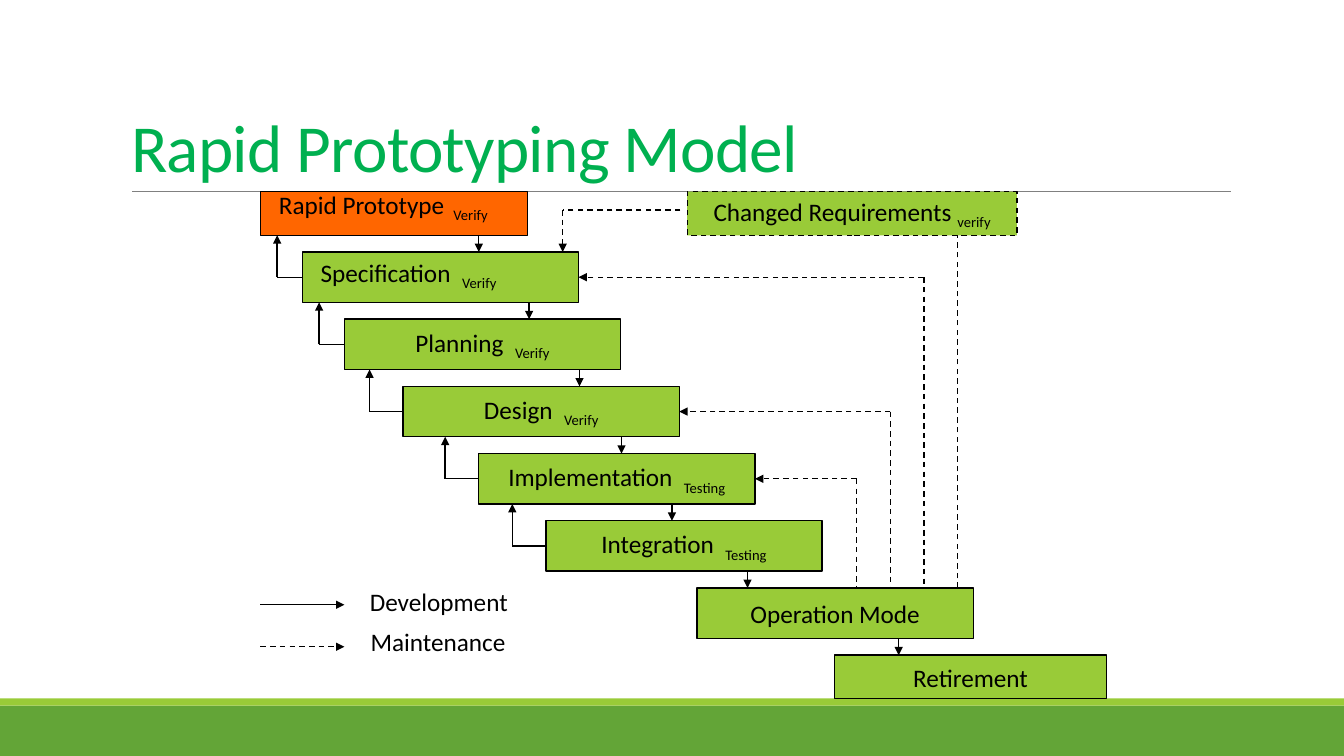
from dataclasses import dataclass

from lxml.etree import SubElement
from pptx import Presentation
from pptx.dml.color import RGBColor
from pptx.enum.dml import MSO_LINE_DASH_STYLE as Dash
from pptx.enum.shapes import MSO_CONNECTOR, MSO_SHAPE
from pptx.enum.text import MSO_ANCHOR, MSO_AUTO_SIZE, PP_ALIGN
from pptx.oxml.ns import qn
from pptx.util import Cm, Pt


@dataclass(frozen=True)
class Theme:
    font: str = "Calibri"
    title_size: int = 48
    body_size: int = 18
    title: str = "00B050"
    ink: str = "000000"
    rule: str = "808080"
    stage: str = "99CB38"
    prototype: str = "FF6600"
    footer: str = "63A537"


# Content: text is (label, subscript)
TITLE = "Rapid Prototyping Model"
PROTOTYPE = ("Rapid Prototype ", " Verify")
SPECIFICATION = ("Specification  ", "Verify")
CHANGED = ("Changed Requirements ", "verify")
RETIREMENT = ("Retirement", "")
# Stages by row, with the left edge in grid units
STAGES = [
    (("", ""), 36),  # Specification has its own left-aligned label
    (("Planning  ", "Verify"), 41),
    (("Design  ", "Verify"), 48),
    (("Implementation  ", "Testing"), 57),
    (("Integration  ", "Testing"), 65),
    (("Operation Mode", ""), 83),
]
# Arrow columns, in grid units
FORWARD_COLUMNS = [57, 63, 69, 74, 80, 89, 107]
BACK_COLUMNS = [33, 38, 44, 53, 61]
MAINTENANCE = [(3, 102), (2, 106), (0, 110)]  # stage row, column
# Legend: label, label left and top in cm, line row, dashed
LEGEND = [
    ("Development", 9.07, 14.66, 72, False),
    ("Maintenance", 9.09, 15.67, 77, True),
]

# Layout: twelve grid units to 2.54 cm
FIRST_TOP, ROW_STEP, STAGE_UNITS, GAP = 30, 8, 6, 2
STAGE_WIDTH = Cm(6.96)
HEADER_TOP, SMALL_HEIGHT, LABEL_HEIGHT = Cm(4.83), Cm(1.1), Cm(1.02)
theme = Theme()


def grid(units):
    return Cm(2.54 * units / 12)


def row_top(row):
    return FIRST_TOP + ROW_STEP * row


def color(value):
    return RGBColor.from_string(value)


def add_run(paragraph, text, size=theme.body_size, ink=theme.ink):
    run = paragraph.add_run()
    run.text = text
    run.font.name = theme.font
    run.font.size = Pt(size)
    run.font.color.rgb = color(ink)
    return run


def write_label(paragraph, label):
    name, subscript = label
    if name:
        add_run(paragraph, name)
    if subscript:
        run = add_run(paragraph, subscript)
        run.font._element.set("baseline", "-25000")


def add_box(slide, left, top, width, height, fill, label=("", ""),
            outlined=True, dashed=False):
    shape = slide.shapes.add_shape(MSO_SHAPE.RECTANGLE, left, top, width, height)
    shape.shadow.inherit = False
    shape.fill.solid()
    shape.fill.fore_color.rgb = color(fill)
    if outlined:
        shape.line.color.rgb = color(theme.ink)
        shape.line.width = Pt(1)
        if dashed:
            shape.line.dash_style = Dash.DASH
    else:
        shape.line.fill.background()
    frame = shape.text_frame
    frame.word_wrap = False
    frame.vertical_anchor = MSO_ANCHOR.MIDDLE
    paragraph = frame.paragraphs[0]
    paragraph.alignment = PP_ALIGN.CENTER
    write_label(paragraph, label)
    return shape


def add_label(slide, left, top, width, label, wrap=False):
    box = slide.shapes.add_textbox(left, top, width, LABEL_HEIGHT)
    frame = box.text_frame
    frame.word_wrap = wrap
    frame.auto_size = MSO_AUTO_SIZE.SHAPE_TO_FIT_TEXT
    write_label(frame.paragraphs[0], label)


def add_line(slide, start, end, ink=theme.ink, width=1, arrow=False, dashed=False):
    line = slide.shapes.add_connector(MSO_CONNECTOR.STRAIGHT, *start, *end)
    line.line.color.rgb = color(ink)
    line.line.width = Pt(width)
    if dashed:
        line.line.dash_style = Dash.DASH
    properties = line._element.spPr
    if arrow:
        SubElement(properties.find(qn("a:ln")), qn("a:tailEnd"), type="triangle")
    SubElement(properties, qn("a:effectLst"))
    return line


def add_grid_line(slide, start, end, **style):
    return add_line(slide, [grid(n) for n in start], [grid(n) for n in end], **style)


def add_frame(slide, slide_width):
    # Footer bands, rule and title
    add_box(slide, 0, Cm(17.78), slide_width, Cm(1.27), theme.footer, outlined=False)
    add_box(slide, 0, Cm(17.6), slide_width, Cm(0.18), theme.stage, outlined=False)
    add_line(slide, (Cm(3.33), HEADER_TOP), (Cm(31.01), HEADER_TOP), theme.rule, 0.5)
    title = slide.shapes.title
    title.left, title.top, title.width, title.height = Cm(3.05), Cm(0.79), Cm(27.94), Cm(4.04)
    frame = title.text_frame
    frame.word_wrap = True
    frame.auto_size = MSO_AUTO_SIZE.NONE
    frame.vertical_anchor = MSO_ANCHOR.BOTTOM
    paragraph = frame.paragraphs[0]
    paragraph.alignment = PP_ALIGN.LEFT
    paragraph.line_spacing = 0.85
    run = add_run(paragraph, TITLE, theme.title_size, theme.title)
    run.font._element.set("spc", "-50")


def add_boxes(slide):
    add_box(slide, grid(31), HEADER_TOP, Cm(6.73), SMALL_HEIGHT, theme.prototype)
    add_label(slide, Cm(6.78), Cm(4.65), Cm(6.15), PROTOTYPE, wrap=True)
    stages = [
        add_box(slide, grid(left), grid(row_top(row)), STAGE_WIDTH,
                grid(STAGE_UNITS), theme.stage, label)
        for row, (label, left) in enumerate(STAGES)
    ]
    add_label(slide, grid(37), grid(FIRST_TOP), Cm(5.38), SPECIFICATION)
    add_box(slide, Cm(21.03), grid(row_top(len(STAGES))), Cm(6.86), SMALL_HEIGHT,
            theme.stage, RETIREMENT)
    add_box(slide, Cm(17.32), HEADER_TOP, Cm(8.31), SMALL_HEIGHT, theme.stage,
            CHANGED, dashed=True)
    return stages


def add_development(slide, stages):
    # Forward arrows cross each gap, back arrows return to the stage above
    for row, column in enumerate(FORWARD_COLUMNS):
        top = row_top(row)
        add_grid_line(slide, (column, top - GAP), (column, top), arrow=True)
    for row, column in enumerate(BACK_COLUMNS):
        top, left = row_top(row), STAGES[row][1]
        middle = top + STAGE_UNITS / 2
        add_grid_line(slide, (column, middle), (column, top - GAP), arrow=True)
        link = add_grid_line(slide, (column, middle), (left, middle))
        link.end_connect(stages[row], 1)


def add_maintenance(slide, stages):
    # Dashed returns from operation mode
    operation_top = row_top(len(STAGES) - 1)
    for row, column in MAINTENANCE:
        middle = row_top(row) + STAGE_UNITS / 2
        link = add_grid_line(slide, (column, middle), (STAGES[row][1] + 33, middle),
                             arrow=True, dashed=True)
        link.end_connect(stages[row], 3)
        add_grid_line(slide, (column, middle), (column, operation_top), dashed=True)
    # Route through the changed requirements
    add_grid_line(slide, (114, operation_top), (114, FIRST_TOP - GAP), dashed=True)
    add_grid_line(slide, (81, 25), (67, 25), dashed=True)
    add_grid_line(slide, (67, 25), (67, FIRST_TOP), arrow=True, dashed=True)


def add_legend(slide):
    for name, left, top, line_row, dashed in LEGEND:
        add_grid_line(slide, (31, line_row), (41, line_row), arrow=True, dashed=dashed)
        add_label(slide, Cm(left), Cm(top), Cm(4), (name, ""))


def main():
    presentation = Presentation()
    presentation.slide_width, presentation.slide_height = Cm(33.87), Cm(19.05)
    slide = presentation.slides.add_slide(presentation.slide_layouts[5])
    add_frame(slide, presentation.slide_width)
    stages = add_boxes(slide)
    add_development(slide, stages)
    add_maintenance(slide, stages)
    add_legend(slide)
    presentation.save("out.pptx")


if __name__ == "__main__":
    main()
